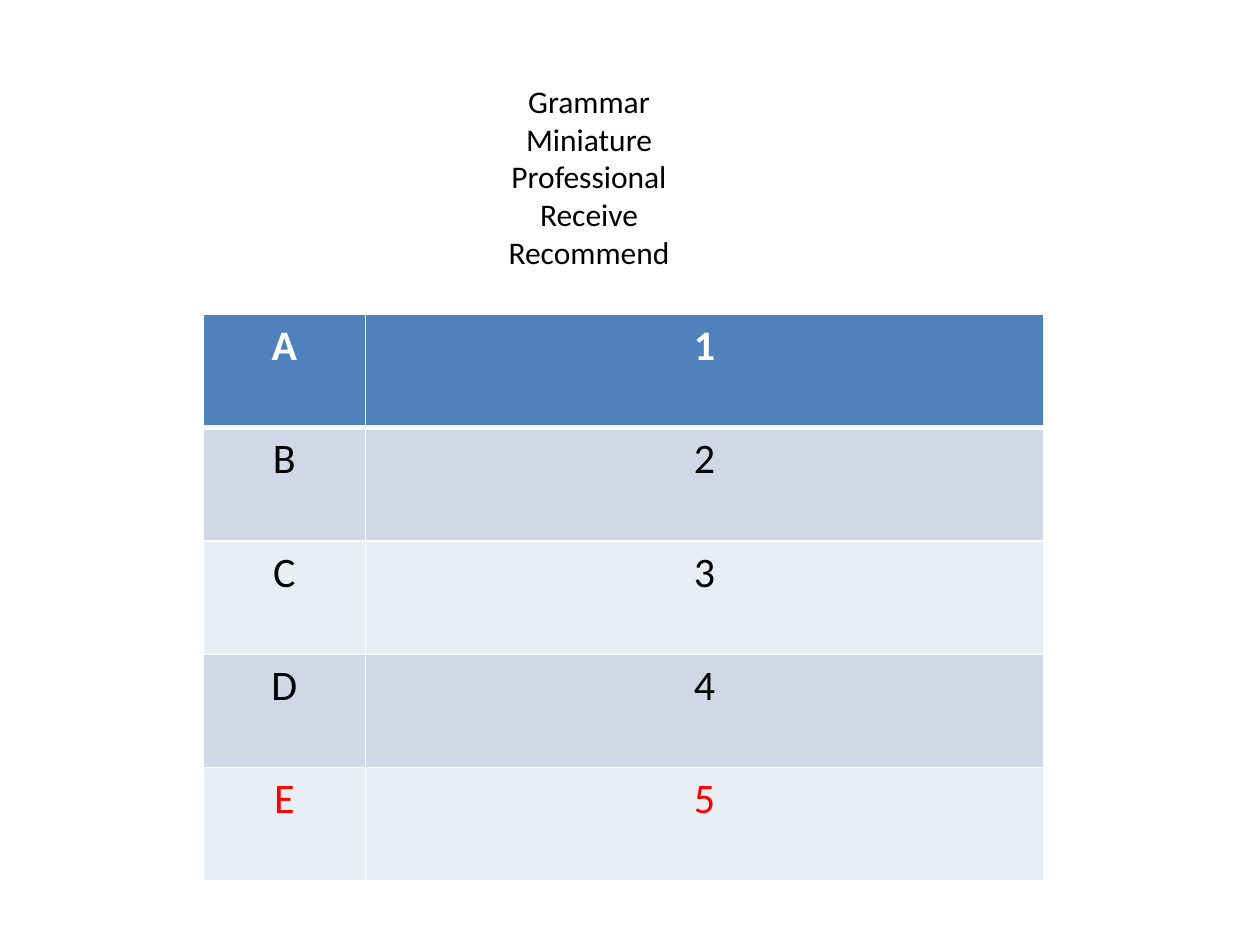
from dataclasses import dataclass

from lxml import etree
from pptx import Presentation
from pptx.dml.color import RGBColor
from pptx.enum.text import PP_ALIGN
from pptx.oxml.ns import qn
from pptx.util import Pt

CENTER = PP_ALIGN.CENTER
BLANK_LAYOUT = 6


@dataclass(frozen=True)
class Theme:
    """Colours, font and type sizes of the slide."""

    font: str = "Calibri"
    word_size: int = 18
    cell_size: int = 24
    text: str = "000000"
    accent: str = "FF0000"
    white: str = "FFFFFF"
    header: str = "4F81BD"
    bands: tuple = ("E9EDF4", "D0D8E8")


THEME = Theme()
WORDS = ["Grammar", "Miniature", "Professional", "Receive", "Recommend"]
ROWS = [("A", "1"), ("B", "2"), ("C", "3"), ("D", "4"), ("E", "5")]
COLUMN_WIDTHS = [92.9, 387.3]
ROW_HEIGHT = 64.8


def format_paragraph(paragraph, text, size, color, bold=False):
    """Write centred text with the given format."""
    paragraph.alignment = CENTER
    run = paragraph.add_run()
    run.text = text
    values = {"name": THEME.font, "size": Pt(size), "bold": bold}
    for name, value in values.items():
        setattr(run.font, name, value)
    run.font.color.rgb = RGBColor.from_string(color)


def add_word_list(slide, words, left, top, width, height):
    """Add a text box with one centred word per paragraph."""
    shape = slide.shapes.add_textbox(Pt(left), Pt(top), Pt(width), Pt(height))
    frame = shape.text_frame
    frame.word_wrap = True
    for index, word in enumerate(words):
        paragraph = frame.add_paragraph() if index else frame.paragraphs[0]
        format_paragraph(paragraph, word, THEME.word_size, THEME.text)


def set_borders(cell, widths):
    """Draw white cell borders with a width in points for each side."""
    properties = cell._tc.get_or_add_tcPr()
    for side, width in widths.items():
        line = etree.SubElement(properties, qn(f"a:ln{side}"), w=str(Pt(width)))
        fill = etree.SubElement(line, qn("a:solidFill"))
        etree.SubElement(fill, qn("a:srgbClr"), val=THEME.white)


def row_style(index, last):
    """Return the fill, text colour and weight of a table row."""
    if index == 0:
        return THEME.header, THEME.white, True
    color = THEME.accent if index == last else THEME.text
    return THEME.bands[index % 2], color, False


def add_answer_table(slide, rows, left, top):
    """Add the table with a header row, bands and a marked last row."""
    table = slide.shapes.add_table(
        len(rows), len(COLUMN_WIDTHS), Pt(left), Pt(top),
        Pt(sum(COLUMN_WIDTHS)), Pt(ROW_HEIGHT * len(rows)),
    ).table
    for column, width in zip(table.columns, COLUMN_WIDTHS):
        column.width = Pt(width)
    for index, values in enumerate(rows):
        table.rows[index].height = Pt(ROW_HEIGHT)
        fill, color, bold = row_style(index, len(rows) - 1)
        borders = {"L": 1, "R": 1, "T": 3 if index == 1 else 1, "B": 1 if index else 3}
        for cell, text in zip(table.rows[index].cells, values):
            set_borders(cell, borders)
            cell.fill.solid()
            cell.fill.fore_color.rgb = RGBColor.from_string(fill)
            paragraph = cell.text_frame.paragraphs[0]
            format_paragraph(paragraph, text, THEME.cell_size, color, bold)


def main():
    """Build and save the slide."""
    presentation = Presentation()
    presentation.slide_width, presentation.slide_height = Pt(720), Pt(540)
    slide = presentation.slides.add_slide(presentation.slide_layouts[BLANK_LAYOUT])
    add_answer_table(slide, ROWS, 116, 179.5)
    add_word_list(slide, WORDS, 234, 43.2, 205.2, 138.2)
    presentation.save("out.pptx")


if __name__ == "__main__":
    main()
